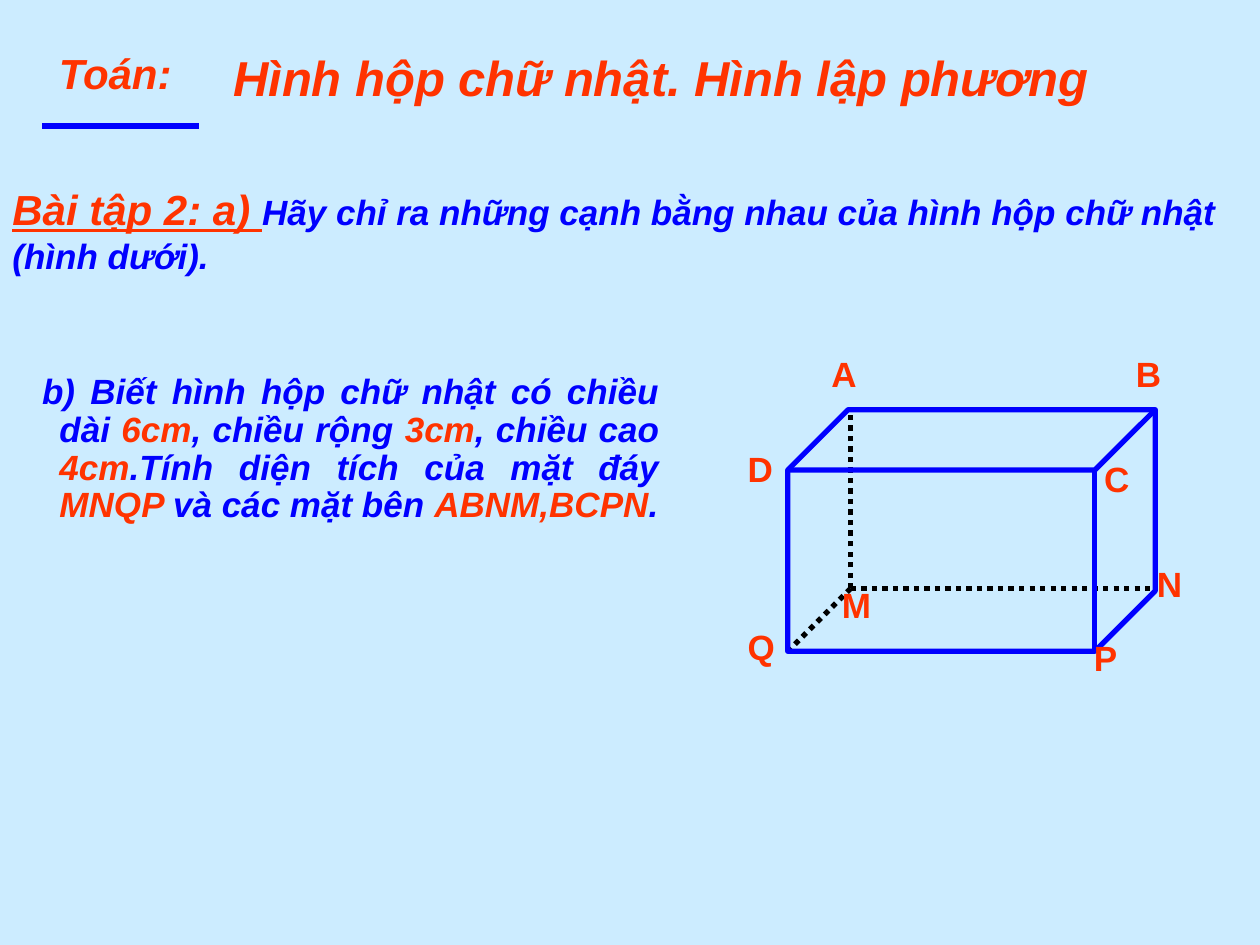
from dataclasses import dataclass
from typing import NamedTuple

from lxml.etree import SubElement
from pptx import Presentation
from pptx.dml.color import RGBColor
from pptx.enum.dml import MSO_LINE
from pptx.enum.shapes import MSO_CONNECTOR, MSO_SHAPE
from pptx.enum.text import MSO_ANCHOR, PP_ALIGN
from pptx.oxml.ns import qn
from pptx.util import Cm, Pt


@dataclass(frozen=True)
class Theme:
    font: str = "Arial"
    background: RGBColor = RGBColor(0xCC, 0xEC, 0xFF)
    accent: RGBColor = RGBColor(0xFF, 0x33, 0x00)
    ink: RGBColor = RGBColor(0x00, 0x00, 0xFF)
    hidden_edge: RGBColor = RGBColor(0x00, 0x00, 0x00)
    heading: int = 28
    lead: int = 24
    body: int = 20
    stroke: int = 3


THEME = Theme()


class Area(NamedTuple):
    left: float
    top: float
    width: float
    height: float


class Point(NamedTuple):
    x: float
    y: float


class Span(NamedTuple):
    text: str
    color: RGBColor = THEME.ink
    size: int = THEME.body
    underline: bool = False


class Vertex(NamedTuple):
    name: str
    left: float
    top: float
    width: float = 1.48


CUBE = Area(15.88, 8.26, 7.41, 4.87)
CUBE_DEPTH = 1.27
LABEL_HEIGHT = 1.11

VERTICES = [
    Vertex("A", 16.51, 6.99),
    Vertex("B", 22.65, 6.99),
    Vertex("N", 23.07, 11.22),
    Vertex("Q", 14.82, 12.49),
    Vertex("M", 16.72, 11.64),
    Vertex("P", 21.8, 12.7),
    Vertex("D", 14.82, 8.89),
    Vertex("C", 22.01, 9.1, 1.07),
]

QUESTION_A = [
    Span("Bài tập 2: a) ", THEME.accent, THEME.lead, True),
    Span("Hãy chỉ ra những cạnh bằng nhau của hình hộp chữ nhật (hình dưới)."),
]

QUESTION_B = [
    Span("b) Biết hình hộp chữ nhật có chiều dài "),
    Span("6cm", THEME.accent),
    Span(", chiều rộng "),
    Span("3cm", THEME.accent),
    Span(", chiều cao "),
    Span("4cm", THEME.accent),
    Span(".Tính diện tích của mặt đáy "),
    Span("MNQP ", THEME.accent),
    Span("và các mặt bên "),
    Span("ABNM,BCPN", THEME.accent),
    Span("."),
]


def add_text(shapes, area: Area, spans: list[Span], *, italic: bool = True,
             align: PP_ALIGN = PP_ALIGN.LEFT, anchor: MSO_ANCHOR = MSO_ANCHOR.TOP,
             wrap: bool = True, line_spacing: float = 1.0,
             margin: float = 0, indent: float = 0) -> None:
    """Add one paragraph of bold spans; margin and indent are in centimetres."""
    frame = shapes.add_textbox(*map(Cm, area)).text_frame
    frame.word_wrap = wrap
    frame.vertical_anchor = anchor
    para = frame.paragraphs[0]
    para.alignment = align
    para.line_spacing = line_spacing
    if margin:
        properties = para._p.get_or_add_pPr()
        properties.set("marL", str(Cm(margin)))
        properties.set("indent", str(Cm(indent)))
    for span in spans:
        run = para.add_run()
        run.text = span.text
        font = run.font
        font.name = THEME.font
        font.size = Pt(span.size)
        font.bold = True
        font.italic = italic
        font.underline = span.underline
        font.color.rgb = span.color


def add_line(shapes, start: Point, end: Point, *, color: RGBColor = THEME.ink,
             dotted: bool = False) -> None:
    connector = shapes.add_connector(
        MSO_CONNECTOR.STRAIGHT, *map(Cm, (*start, *end)))
    connector.line.color.rgb = color
    connector.line.width = Pt(THEME.stroke)
    if dotted:
        connector.line.dash_style = MSO_LINE.ROUND_DOT
    SubElement(connector._element.spPr, qn("a:effectLst"))


def add_cuboid(shapes) -> None:
    """Draw the labelled cuboid with its three hidden edges meeting at M."""
    right = CUBE.left + CUBE.width
    bottom = CUBE.top + CUBE.height
    corner_m = Point(CUBE.left + CUBE_DEPTH, bottom - CUBE_DEPTH)
    corner_n = Point(right, corner_m.y)
    corner_a = Point(corner_m.x, CUBE.top)
    corner_q = Point(CUBE.left, bottom)
    for corner in (corner_n, corner_a, corner_q):
        add_line(shapes, corner_m, corner, color=THEME.hidden_edge, dotted=True)

    cube = shapes.add_shape(MSO_SHAPE.CUBE, *map(Cm, CUBE))
    cube.adjustments[0] = 0.25
    cube.shadow.inherit = False
    cube.fill.background()
    cube.line.color.rgb = THEME.ink
    cube.line.width = Pt(THEME.stroke)

    for vertex in VERTICES:
        area = Area(vertex.left, vertex.top, vertex.width, LABEL_HEIGHT)
        add_text(shapes, area, [Span(vertex.name, THEME.accent)], italic=False)


def main() -> None:
    deck = Presentation()
    deck.slide_width, deck.slide_height = Cm(25.4), Cm(19.05)
    page = deck.slides.add_slide(deck.slide_layouts[6])
    page.background.fill.solid()
    page.background.fill.fore_color.rgb = THEME.background

    add_text(page.shapes, Area(0, 3.99, 25.4, 1.3), QUESTION_A,
             anchor=MSO_ANCHOR.MIDDLE)
    add_text(page.shapes, Area(0, 7.42, 13.54, 10.8), QUESTION_B,
             align=PP_ALIGN.JUSTIFY, line_spacing=0.9, margin=0.95, indent=-0.35)
    add_cuboid(page.shapes.add_group_shape().shapes)
    add_text(page.shapes, Area(0.84, 0.84, 2.97, 1.47),
             [Span("Toán:", THEME.accent, THEME.lead)],
             align=PP_ALIGN.CENTER, wrap=False)
    add_text(page.shapes, Area(4.45, 0.84, 23.06, 1.7),
             [Span("Hình hộp chữ nhật. Hình lập phương", THEME.accent, THEME.heading)])
    add_line(page.shapes, Point(0.85, 2.54), Point(4.02, 2.54))

    deck.save("out.pptx")


if __name__ == "__main__":
    main()
